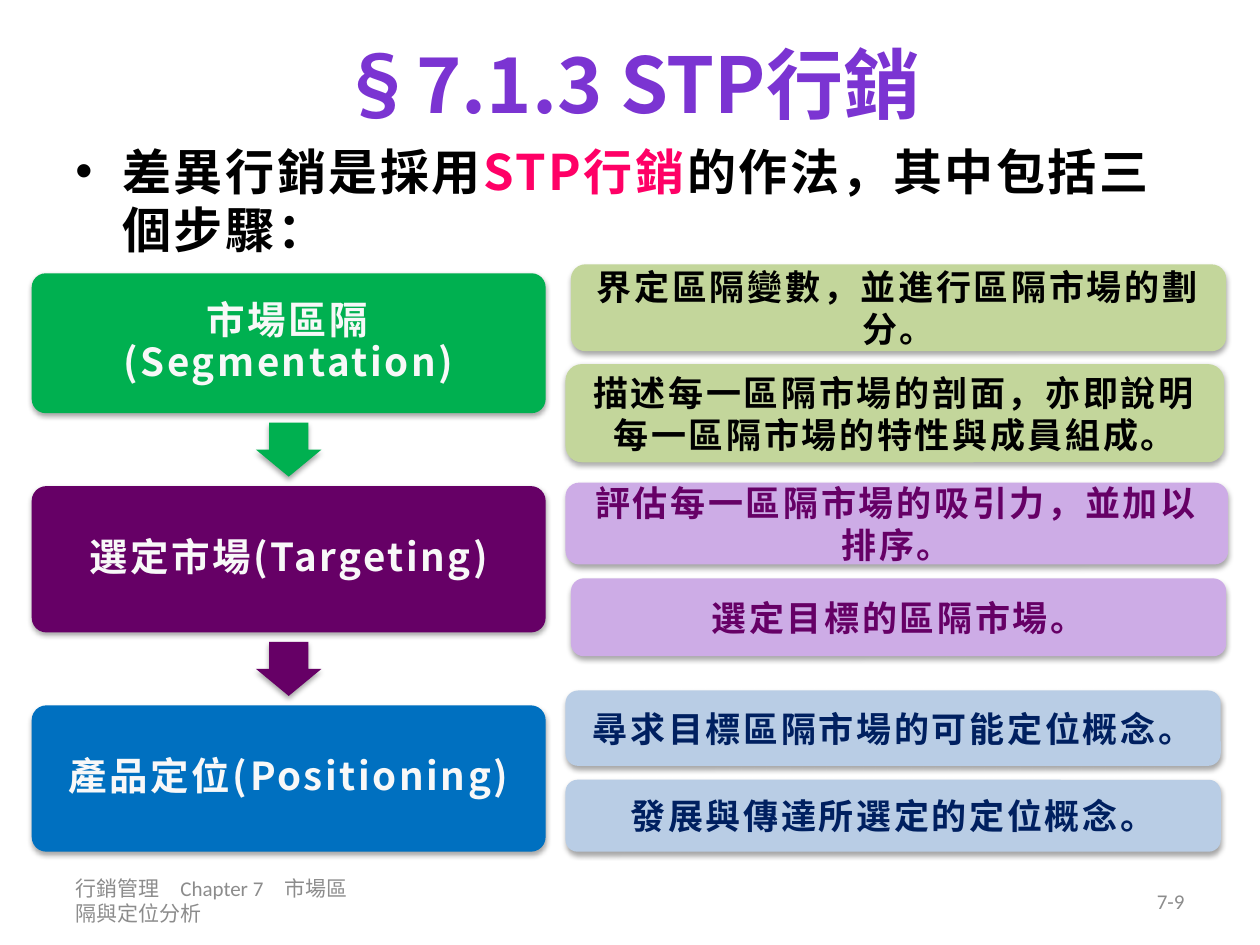
import dataclasses
import typing

import lxml.etree
import pptx
import pptx.dml.color
import pptx.enum.shapes
import pptx.enum.text
import pptx.oxml.ns
import pptx.util

Cm = pptx.util.Cm
Pt = pptx.util.Pt
Align = pptx.enum.text.PP_ALIGN
Anchor = pptx.enum.text.MSO_ANCHOR
Shape = pptx.enum.shapes.MSO_SHAPE
qn = pptx.oxml.ns.qn


@dataclasses.dataclass(frozen=True)
class Theme:
    heading_font: str = "Noto Sans CJK SC"
    footer_font: str = "Calibri"
    title: str = "7B34D2"
    text: str = "000000"
    accent: str = "FF0066"
    light: str = "F8F8F8"
    grey: str = "8C8C8C"
    green: str = "00B050"
    purple: str = "660066"
    blue: str = "0070C0"
    pale_green: str = "C3D69B"
    pale_purple: str = "CDACE6"
    pale_blue: str = "B9CDE5"
    navy: str = "002060"
    title_size: float = 44
    body_size: float = 28
    step_size: float = 22
    detail_size: float = 20
    footer_size: float = 12
    tracking: float = 1.5


THEME = Theme()


class Box(typing.NamedTuple):
    left: float
    top: float
    width: float
    height: float

    def lengths(self) -> list:
        return [Cm(v) for v in self]


class Run(typing.NamedTuple):
    text: str
    color: str


class Step(typing.NamedTuple):
    text: str
    box: Box
    fill: str


class Detail(typing.NamedTuple):
    text: str
    box: Box
    fill: str
    color: str


STEP_LEFT, STEP_WIDTH = 0.64, 10.36
ARROW_LENGTH, ARROW_BREADTH = 1.09, 1.32

STEPS = [
    Step("市場區隔(Segmentation)", Box(STEP_LEFT, 5.51, STEP_WIDTH, 2.82), THEME.green),
    Step("選定市場(Targeting)", Box(STEP_LEFT, 9.8, STEP_WIDTH, 2.95), THEME.purple),
    Step("產品定位(Positioning)", Box(STEP_LEFT, 14.22, STEP_WIDTH, 2.95), THEME.blue),
]

DETAILS = [
    Detail("界定區隔變數，並進行區隔市場的劃分。",
           Box(11.51, 5.33, 13.21, 1.75), THEME.pale_green, THEME.text),
    Detail("描述每一區隔市場的剖面，亦即說明每一區隔市場的特性與成員組成。",
           Box(11.4, 7.34, 13.28, 1.98), THEME.pale_green, THEME.text),
    Detail("評估每一區隔市場的吸引力，並加以排序。",
           Box(11.4, 9.73, 13.36, 1.65), THEME.pale_purple, THEME.purple),
    Detail("選定目標的區隔市場。",
           Box(11.51, 11.66, 13.21, 1.57), THEME.pale_purple, THEME.purple),
    Detail("尋求目標區隔市場的可能定位概念。",
           Box(11.4, 13.92, 13.21, 1.52), THEME.pale_blue, THEME.navy),
    Detail("發展與傳達所選定的定位概念。",
           Box(11.4, 15.72, 13.21, 1.45), THEME.pale_blue, THEME.navy),
]


def write_text(tf, runs: list[Run], *, size: float, font: str = THEME.heading_font,
               bold: bool = True, align=Align.CENTER, anchor=Anchor.MIDDLE,
               tracking: float = 0, line_spacing: float = 1.0, bullet: str = "") -> None:
    tf.word_wrap = True
    tf.vertical_anchor = anchor
    p = tf.paragraphs[0]
    p.alignment = align
    p.line_spacing = line_spacing
    if bullet:
        pPr = p._p.get_or_add_pPr()
        pPr.set("marL", str(Cm(0.95)))
        pPr.set("indent", str(Cm(-0.95)))
        lxml.etree.SubElement(pPr, qn("a:buFont")).set("typeface", "Arial")
        lxml.etree.SubElement(pPr, qn("a:buChar")).set("char", bullet)
    for run in runs:
        r = p.add_run()
        r.text = run.text
        r.font.size = Pt(size)
        r.font.bold = bold
        r.font.color.rgb = pptx.dml.color.RGBColor.from_string(run.color)
        r.font.name = font
        rPr = r._r.get_or_add_rPr()
        lxml.etree.SubElement(rPr, qn("a:ea")).set("typeface", THEME.heading_font)
        if tracking:
            rPr.set("spc", str(round(tracking * 100)))


def add_text(slide, box: Box, runs: list[Run], **fmt):
    tf = slide.shapes.add_textbox(*box.lengths()).text_frame
    write_text(tf, runs, **fmt)
    return tf


def add_shadowed(slide, kind, box: Box, fill: str):
    sp = slide.shapes.add_shape(kind, *box.lengths())
    sp.fill.solid()
    sp.fill.fore_color.rgb = pptx.dml.color.RGBColor.from_string(fill)
    sp.line.fill.background()
    sp.shadow.inherit = False
    effects = sp.element.spPr.find(qn("a:effectLst"))
    shadow = lxml.etree.SubElement(effects, qn("a:outerShdw"), blurRad=str(Pt(3.1)),
                                   dist=str(Pt(1.8)), dir="5400000", rotWithShape="0")
    color = lxml.etree.SubElement(shadow, qn("a:srgbClr"), val="000000")
    lxml.etree.SubElement(color, qn("a:alpha"), val="35000")
    return sp


def add_step(slide, step: Step) -> None:
    sp = add_shadowed(slide, Shape.ROUNDED_RECTANGLE, step.box, step.fill)
    sp.adjustments[0] = 0.1
    tf = sp.text_frame
    tf.margin_left = tf.margin_right = Cm(0.31)
    write_text(tf, [Run(step.text, THEME.light)], size=THEME.step_size,
               tracking=THEME.tracking, line_spacing=0.9)


def add_arrow(slide, upper: Step, lower: Step) -> None:
    x = upper.box.left + upper.box.width / 2
    y = (upper.box.top + upper.box.height + lower.box.top) / 2
    box = Box(x - ARROW_LENGTH / 2, y - ARROW_BREADTH / 2, ARROW_LENGTH, ARROW_BREADTH)
    sp = add_shadowed(slide, Shape.RIGHT_ARROW, box, upper.fill)
    sp.rotation = 90
    sp.adjustments[0] = 0.6
    sp.adjustments[1] = 0.5


def add_detail(slide, detail: Detail) -> None:
    sp = add_shadowed(slide, Shape.ROUNDED_RECTANGLE, detail.box, detail.fill)
    write_text(sp.text_frame, [Run(detail.text, detail.color)],
               size=THEME.detail_size, tracking=THEME.tracking)


def main() -> None:
    prs = pptx.Presentation()
    prs.slide_width, prs.slide_height = Cm(25.4), Cm(19.05)
    slide = prs.slides.add_slide(prs.slide_layouts[6])

    add_text(slide, Box(1.27, 0, 22.86, 3.33), [Run("§7.1.3 STP行銷", THEME.title)],
             size=THEME.title_size)
    add_text(slide, Box(1.27, 2.72, 22.86, 3.61),
             [Run("差異行銷是採用", THEME.text), Run("STP行銷", THEME.accent),
              Run("的作法，其中包括三個步驟：", THEME.text)],
             size=THEME.body_size, align=Align.LEFT, anchor=Anchor.TOP,
             tracking=THEME.tracking, bullet="•")

    footer = dict(size=THEME.footer_size, font=THEME.footer_font, bold=False)
    tf = add_text(slide, Box(1.27, 17.65, 5.92, 1.02),
                  [Run("行銷管理　Chapter 7　市場區隔與定位分析", THEME.grey)],
                  align=Align.LEFT, **footer)
    tf.margin_right = 0
    add_text(slide, Box(18.21, 17.65, 5.92, 1.02), [Run("7-9", THEME.grey)],
             align=Align.RIGHT, **footer)

    for step in STEPS:
        add_step(slide, step)
    for upper, lower in zip(STEPS, STEPS[1:]):
        add_arrow(slide, upper, lower)
    for detail in DETAILS:
        add_detail(slide, detail)

    prs.save("out.pptx")


if __name__ == "__main__":
    main()
